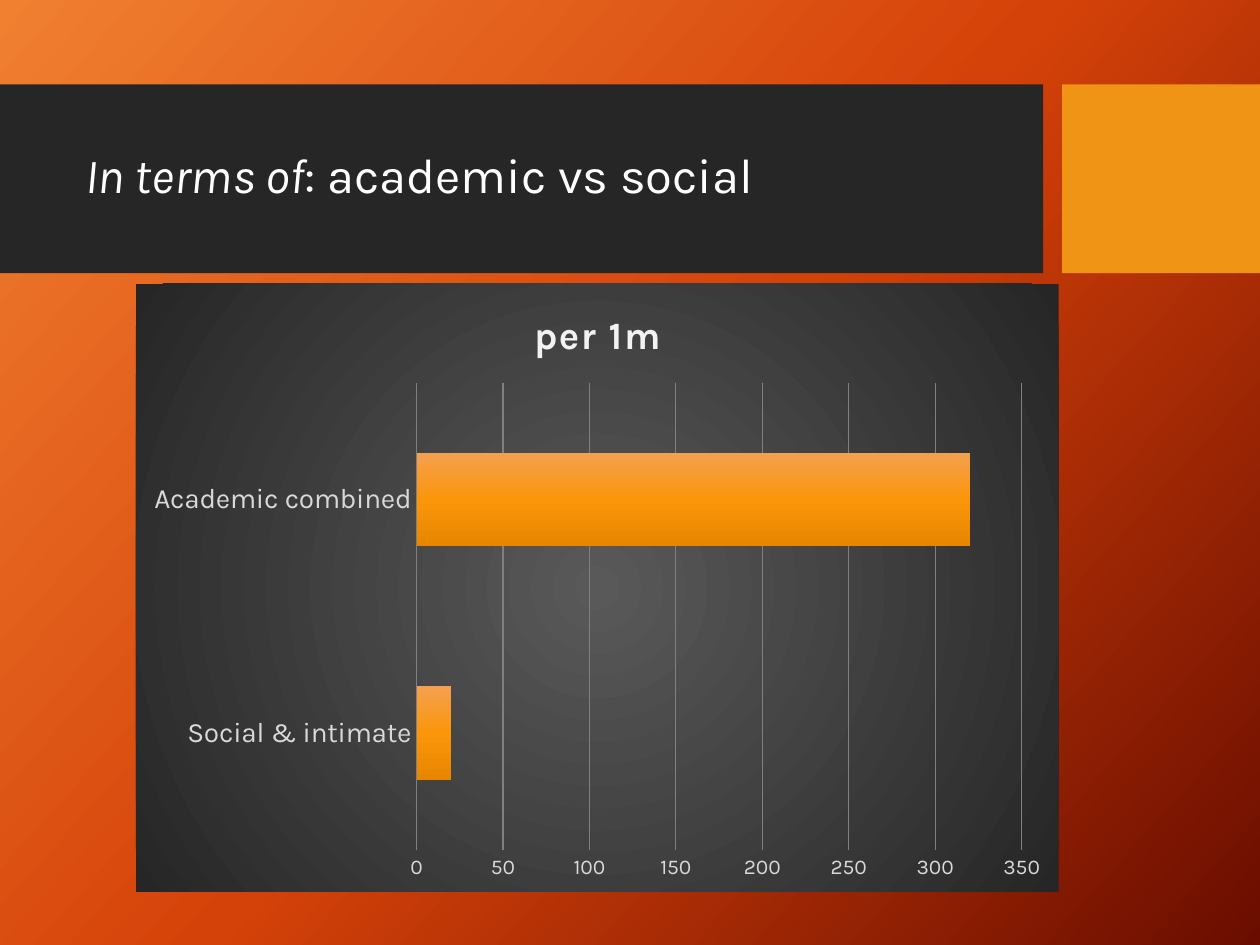
from lxml.etree import SubElement
from pptx import Presentation
from pptx.chart.data import CategoryChartData
from pptx.dml.color import RGBColor
from pptx.enum.chart import XL_CHART_TYPE, XL_TICK_MARK
from pptx.enum.shapes import MSO_SHAPE
from pptx.enum.text import MSO_ANCHOR, PP_ALIGN
from pptx.oxml import parse_xml
from pptx.oxml.ns import nsdecls, qn
from pptx.util import Cm, Pt

FONT = "Karla"
WHITE = RGBColor(0xFF, 0xFF, 0xFF)
OFF_WHITE = RGBColor(0xF2, 0xF2, 0xF2)
LABEL_GREY = RGBColor(0xD9, 0xD9, 0xD9)
GRID_GREY = RGBColor(0x80, 0x80, 0x80)
CHARCOAL = RGBColor(0x26, 0x26, 0x26)
PANEL_GREY = RGBColor(0x59, 0x59, 0x59)
AMBER = RGBColor(0xF0, 0x94, 0x15)
BACKGROUND = [(0, RGBColor(0xF1, 0x80, 0x31)), (50, RGBColor(0xD5, 0x42, 0x09)),
              (100, RGBColor(0x6A, 0x0D, 0x00))]
BAR_COLORS = [(0, RGBColor(0xF4, 0xA0, 0x50)), (50, RGBColor(0xFB, 0x96, 0x0A)),
              (100, RGBColor(0xE8, 0x86, 0x00))]
PANEL_COLORS = [(0, PANEL_GREY), (100, CHARCOAL)]


def gradient(stops, angle=None):
    """Linear gradient at an angle in degrees, or circular without one."""
    fill = parse_xml(f'<a:gradFill rotWithShape="1" {nsdecls("a")}/>')
    stop_list = SubElement(fill, qn("a:gsLst"))
    for position, color in stops:
        stop = SubElement(stop_list, qn("a:gs"), pos=str(position * 1000))
        SubElement(stop, qn("a:srgbClr"), val=str(color))
    if angle is None:
        center = SubElement(fill, qn("a:path"), path="circle")
        SubElement(center, qn("a:fillToRect"), dict.fromkeys("ltrb", "50000"))
    else:
        SubElement(fill, qn("a:lin"), ang=str(angle * 60000), scaled="0")
    return fill


def format_font(font, color, **values):
    font.name = FONT
    font.color.rgb = color
    for name, value in values.items():
        setattr(font, name, value)


def paint_background(page):
    page.background.fill.gradient()
    old = page.background._cSld.find(".//" + qn("a:gradFill"))
    old.getparent().replace(old, gradient(BACKGROUND, 42))


def add_band(page, left, width, color):
    band = page.shapes.add_shape(MSO_SHAPE.RECTANGLE, Cm(left), Cm(1.7), Cm(width), Cm(3.81))
    band.shadow.inherit = False
    band.fill.solid()
    band.fill.fore_color.rgb = color
    band.line.fill.background()


def add_title(page, parts):
    title = page.shapes.title
    place = {"left": Cm(1.47), "top": Cm(2.08), "width": Cm(19.15), "height": Cm(3)}
    for name, value in place.items():
        setattr(title, name, value)
    title.text_frame.vertical_anchor = MSO_ANCHOR.MIDDLE
    para = title.text_frame.paragraphs[0]
    para.alignment = PP_ALIGN.LEFT
    para.line_spacing = 0.9
    for text, italic in parts:
        span = para.add_run()
        span.text = text
        format_font(span.font, WHITE, size=Pt(28), italic=italic)
    # Bring the title in front of the bands
    page.shapes._spTree.append(title._element)


def format_axis(axis, size):
    axis.major_tick_mark = axis.minor_tick_mark = XL_TICK_MARK.NONE
    axis.format.line.fill.background()
    format_font(axis.tick_labels.font, LABEL_GREY, size=Pt(size))


def add_bar_chart(page, heading, values):
    data = CategoryChartData()
    data.categories = list(values)
    data.add_series("Series 1", list(values.values()))
    chart = page.shapes.add_chart(XL_CHART_TYPE.BAR_CLUSTERED, Cm(2.74), Cm(5.72),
                                  Cm(18.6), Cm(12.26), data).chart
    chart.has_legend = False
    format_font(chart.font, WHITE, size=Pt(10))

    # Heading
    chart.has_title = True
    para = chart.chart_title.text_frame.paragraphs[0]
    span = para.add_run()
    span.text = heading
    format_font(span.font, OFF_WHITE, size=Pt(22), bold=True)
    span.font._element.set("spc", "100")
    chart.chart_title.include_in_layout = False

    # Axes and gridlines
    format_axis(chart.category_axis, 16)
    scale = chart.value_axis
    format_axis(scale, 12)
    limits = {"minimum_scale": 0, "maximum_scale": 350, "major_unit": 50}
    for name, value in limits.items():
        setattr(scale, name, value)
    scale.has_major_gridlines = True
    grid_line = scale.major_gridlines.format.line
    grid_line.color.rgb = GRID_GREY
    grid_line.width = Pt(0.75)

    # Bars
    plot = chart.plots[0]
    plot.gap_width = 150
    plot.vary_by_categories = False
    bars = plot.series[0]
    bars.format.fill.gradient()
    old = bars._element.find(".//" + qn("a:gradFill"))
    old.getparent().replace(old, gradient(BAR_COLORS, 90))

    # Panel behind the plot
    panel = parse_xml(f'<c:spPr {nsdecls("c", "a")}><a:ln><a:noFill/></a:ln></c:spPr>')
    panel.insert(0, gradient(PANEL_COLORS))
    chart._chartSpace.find(qn("c:chart")).addnext(panel)


def main():
    deck = Presentation()
    deck.slide_width, deck.slide_height = Cm(25.4), Cm(19.05)
    page = deck.slides.add_slide(deck.slide_layouts[5])
    paint_background(page)
    add_band(page, 0, 21.03, CHARCOAL)
    add_band(page, 21.41, 3.99, AMBER)
    add_title(page, [("In terms of", True), (": academic vs social", False)])
    add_bar_chart(page, "per 1m", {"Social & intimate": 20, "Academic combined": 320})
    deck.save("out.pptx")


if __name__ == "__main__":
    main()
